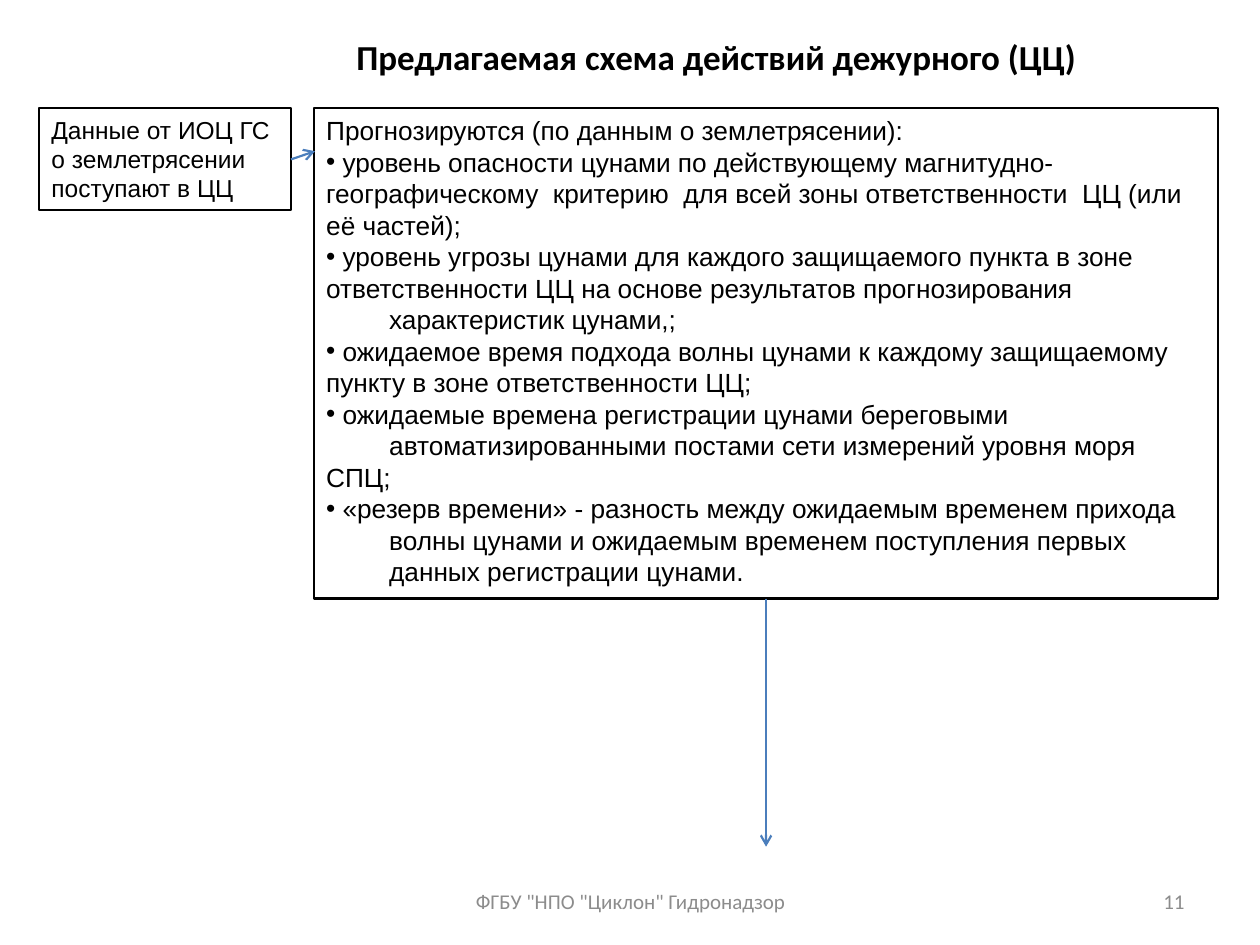
from lxml.etree import SubElement
from pptx import Presentation
from pptx.dml.color import RGBColor
from pptx.enum.shapes import MSO_CONNECTOR, MSO_SHAPE
from pptx.enum.text import MSO_ANCHOR as ANCHOR, PP_ALIGN as ALIGN
from pptx.oxml.ns import qn
from pptx.util import Inches, Pt

BLACK, GRAY, BLUE = "000000", "8C8C8C", "4B7EBC"
LINE_WIDTH = 1.25
BULLET = "•"

TITLE = "Предлагаемая схема действий дежурного (ЦЦ)"
FOOTER = 'ФГБУ "НПО "Циклон" Гидронадзор'
PAGE = "11"
SOURCE_DATA = ["Данные от ИОЦ ГС", "о землетрясении", "поступают в ЦЦ"]
FORECAST = [
    "Прогнозируются (по данным о землетрясении):",
    "• уровень опасности цунами по действующему магнитудно-\tгеографическому"
    "  критерию  для всей зоны ответственности \tЦЦ (или её частей);",
    "• уровень угрозы цунами для каждого защищаемого пункта в зоне"
    "  \tответственности ЦЦ на основе результатов прогнозирования",
    "\tхарактеристик цунами,;",
    "• ожидаемое время подхода волны цунами к каждому защищаемому"
    " \tпункту в зоне ответственности ЦЦ;",
    "• ожидаемые времена регистрации цунами береговыми",
    "\tавтоматизированными постами сети измерений уровня моря \tСПЦ;",
    "• «резерв времени» - разность между ожидаемым временем прихода",
    "\tволны цунами и ожидаемым временем поступления первых",
    "\tданных регистрации цунами.",
]


def color(hex_code):
    return RGBColor.from_string(hex_code)


def write(shape, lines, size, font="Calibri", fill=BLACK, bold=False,
          align=ALIGN.LEFT, anchor=ANCHOR.TOP, wrap=True, leading=None):
    """Fill a shape with paragraphs; a leading bullet sign becomes a real bullet."""
    frame = shape.text_frame
    frame.word_wrap = wrap
    frame.vertical_anchor = anchor
    for i, line in enumerate(lines):
        paragraph = frame.paragraphs[0] if i == 0 else frame.add_paragraph()
        paragraph.alignment = align
        if leading:
            paragraph.line_spacing = Pt(leading)
        if line.startswith(BULLET):
            properties = paragraph._p.get_or_add_pPr()
            SubElement(properties, qn("a:buFont"), typeface="Arial")
            SubElement(properties, qn("a:buChar"), char=BULLET)
        run = paragraph.add_run()
        run.text = line.removeprefix(BULLET)
        run.font.name, run.font.size, run.font.bold = font, Pt(size), bold
        run.font.color.rgb = color(fill)


def add_label(slide, place, text, size, **style):
    label = slide.shapes.add_textbox(*map(Inches, place))
    write(label, [text], size, **style)


def add_box(slide, place, lines, size):
    box = slide.shapes.add_shape(MSO_SHAPE.RECTANGLE, *map(Inches, place))
    box.shadow.inherit = False
    box.fill.background()
    box.line.color.rgb = color(BLACK)
    box.line.width = Pt(LINE_WIDTH)
    write(box, lines, size, font="Arial", leading=1.2 * size)
    return box


def add_arrow(slide, box, side, end):
    """Draw an arrow from the middle of a box's side to a point."""
    x, y = map(Inches, end)
    arrow = slide.shapes.add_connector(MSO_CONNECTOR.STRAIGHT, x, y, x, y)
    arrow.begin_connect(box, side)
    arrow.line.color.rgb = color(BLUE)
    arrow.line.width = Pt(LINE_WIDTH)
    SubElement(arrow.line._get_or_add_ln(), qn("a:tailEnd"), type="arrow")
    SubElement(arrow._element.spPr, qn("a:effectLst"))


def main():
    deck = Presentation()
    deck.slide_width, deck.slide_height = Inches(10), Inches(7.5)
    slide = deck.slides.add_slide(deck.slide_layouts[6])

    footer_style = dict(fill=GRAY, anchor=ANCHOR.MIDDLE)
    add_label(slide, (3.42, 6.95, 3.17, 0.4), FOOTER, 12,
              align=ALIGN.CENTER, **footer_style)
    add_label(slide, (7.17, 6.95, 2.33, 0.4), PAGE, 12,
              align=ALIGN.RIGHT, **footer_style)
    add_label(slide, (2.73, 0.23, 6, 0.44), TITLE, 20, bold=True, wrap=False)

    source_box = add_box(slide, (0.31, 0.86, 2, 0.81), SOURCE_DATA, 14)
    forecast_box = add_box(slide, (2.49, 0.86, 7.18, 3.89), FORECAST, 15)
    add_arrow(slide, source_box, 3, (2.5, 1.2))
    add_arrow(slide, forecast_box, 2, (6.08, 6.72))

    deck.save("out.pptx")


if __name__ == "__main__":
    main()
